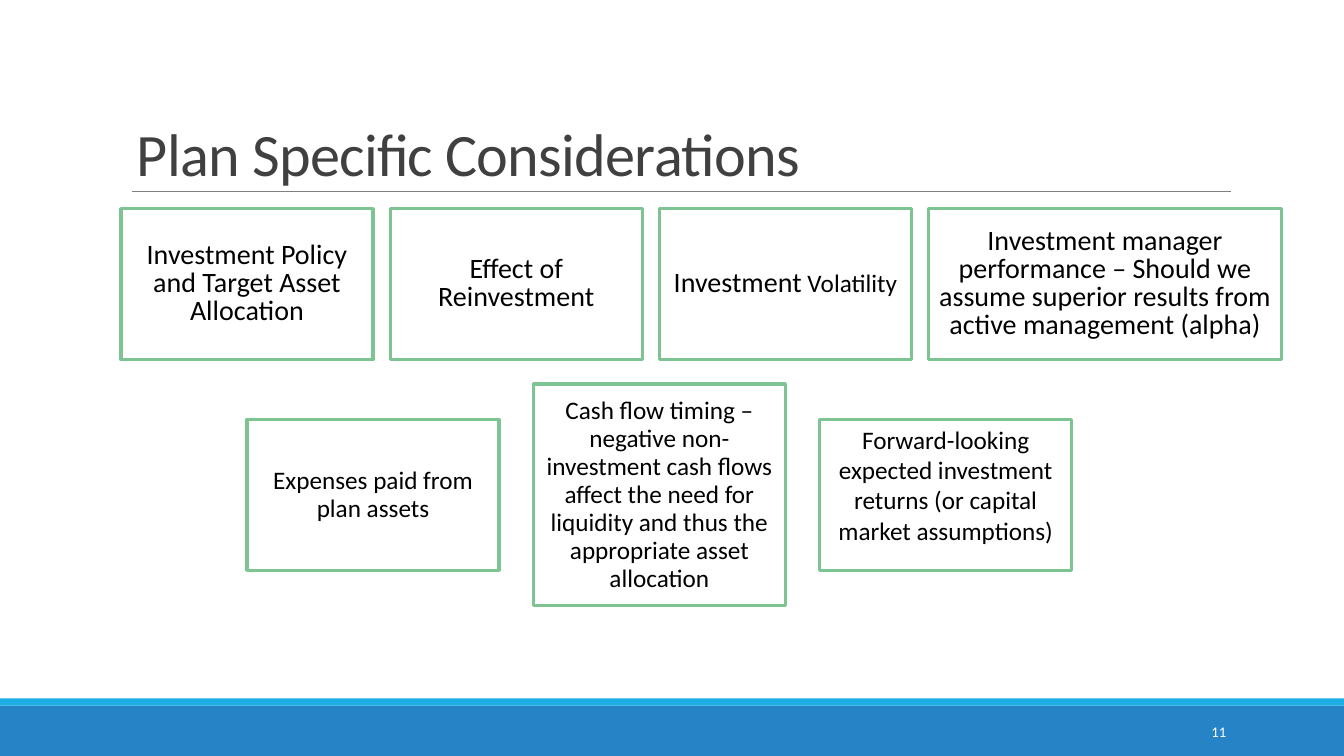
from pptx import Presentation
from pptx.dml.color import RGBColor
from pptx.enum.shapes import MSO_CONNECTOR, MSO_SHAPE
from pptx.enum.text import MSO_ANCHOR, PP_ALIGN
from pptx.oxml.ns import qn
from pptx.util import Inches, Pt
from lxml import etree

RECTANGLE = MSO_SHAPE.RECTANGLE
STRAIGHT = MSO_CONNECTOR.STRAIGHT
TOP, MIDDLE, BOTTOM = MSO_ANCHOR.TOP, MSO_ANCHOR.MIDDLE, MSO_ANCHOR.BOTTOM
LEFT, CENTER, RIGHT = PP_ALIGN.LEFT, PP_ALIGN.CENTER, PP_ALIGN.RIGHT


def color(value):
    return RGBColor.from_string(value)


def apply(target, values):
    for name, value in values.items():
        setattr(target, name, value)


class SlideBuilder:
    font = "Calibri"
    border = "7EC492"
    border_width = 2.25
    ink = "000000"

    def __init__(self, page):
        self.page = page

    def add_text(self, shape, spans, ink, anchor, align, spacing=None, tracking=None):
        """Fill a shape with one paragraph of (text, size) spans."""
        apply(shape.text_frame, {"word_wrap": True, "vertical_anchor": anchor})
        para = shape.text_frame.paragraphs[0]
        apply(para, {"alignment": align, "line_spacing": spacing})
        for text, size in spans:
            span = para.add_run()
            span.text = text
            apply(span.font, {"name": self.font, "size": Pt(size)})
            span.font.color.rgb = color(ink)
            if tracking:
                span.font._element.set("spc", str(tracking))

    def rectangle(self, left, top, width, height):
        shape = self.page.shapes.add_shape(
            RECTANGLE, Inches(left), Inches(top), Inches(width), Inches(height))
        shape.shadow.inherit = False
        return shape

    def band(self, top, height, fill):
        shape = self.rectangle(0, top, 13.33, height)
        shape.fill.solid()
        shape.fill.fore_color.rgb = color(fill)
        shape.line.fill.background()

    def rule(self, left, right, top, ink, width):
        line = self.page.shapes.add_connector(
            STRAIGHT, Inches(left), Inches(top), Inches(right), Inches(top))
        line.line.color.rgb = color(ink)
        line.line.width = Pt(width)
        etree.SubElement(line._element.spPr, qn("a:effectLst"))

    def label(self, left, top, width, height, text, size, ink, **layout):
        box = self.page.shapes.add_textbox(
            Inches(left), Inches(top), Inches(width), Inches(height))
        self.add_text(box, [(text, size)], ink, **layout)

    def card(self, left, top, width, height, spans, anchor=MIDDLE, spacing=Pt(20)):
        box = self.rectangle(left, top, width, height)
        box.fill.background()
        box.line.color.rgb = color(self.border)
        box.line.width = Pt(self.border_width)
        self.add_text(box, spans, self.ink, anchor, CENTER, spacing)


def main():
    deck = Presentation()
    apply(deck, {"slide_width": Inches(13.33), "slide_height": Inches(7.5)})
    builder = SlideBuilder(deck.slides.add_slide(deck.slide_layouts[6]))

    # Footer bands and title
    builder.band(7, 0.5, "2683C6")
    builder.band(6.93, 0.07, "1CADE4")
    builder.rule(1.31, 12.21, 1.9, "808080", 0.5)
    builder.label(1.26, 0.57, 11, 1.35, "Plan Specific Considerations", 43, "404040",
                  anchor=BOTTOM, align=LEFT, spacing=0.85, tracking=-50)

    # Upper row: equal gaps, last card wider
    upper_row = [
        (2.5, [("Investment Policy and Target Asset Allocation", 20)]),
        (2.5, [("Effect of Reinvestment", 20)]),
        (2.5, [("Investment", 20), (" Volatility", 18)]),
        (3.5, [("Investment manager performance – Should we assume superior "
                "results from active management (alpha)", 20)]),
    ]
    left, gap = 1.2, 0.17
    for width, spans in upper_row:
        builder.card(left, 2.07, width, 1.5, spans)
        left += width + gap

    # Lower row: cards centred on one horizontal axis
    lower_row = [
        (1.5, "Expenses paid from plan assets", {}),
        (2.2, "Cash flow timing –negative non-investment cash flows affect the need "
              "for liquidity and thus the appropriate asset allocation", {}),
        (1.5, "Forward-looking expected investment returns (or capital market "
              "assumptions)", {"anchor": TOP, "spacing": None}),
    ]
    axis, pitch = 4.91, 2.84
    for column, (height, text, layout) in enumerate(lower_row):
        builder.card(2.45 + column * pitch, axis - height / 2, 2.5, height,
                     [(text, 18)], **layout)

    # Page number
    builder.label(10.83, 7.06, 1.43, 0.4, "11", 10.5, "FFFFFF",
                  anchor=MIDDLE, align=RIGHT)

    deck.save("out.pptx")


if __name__ == "__main__":
    main()
